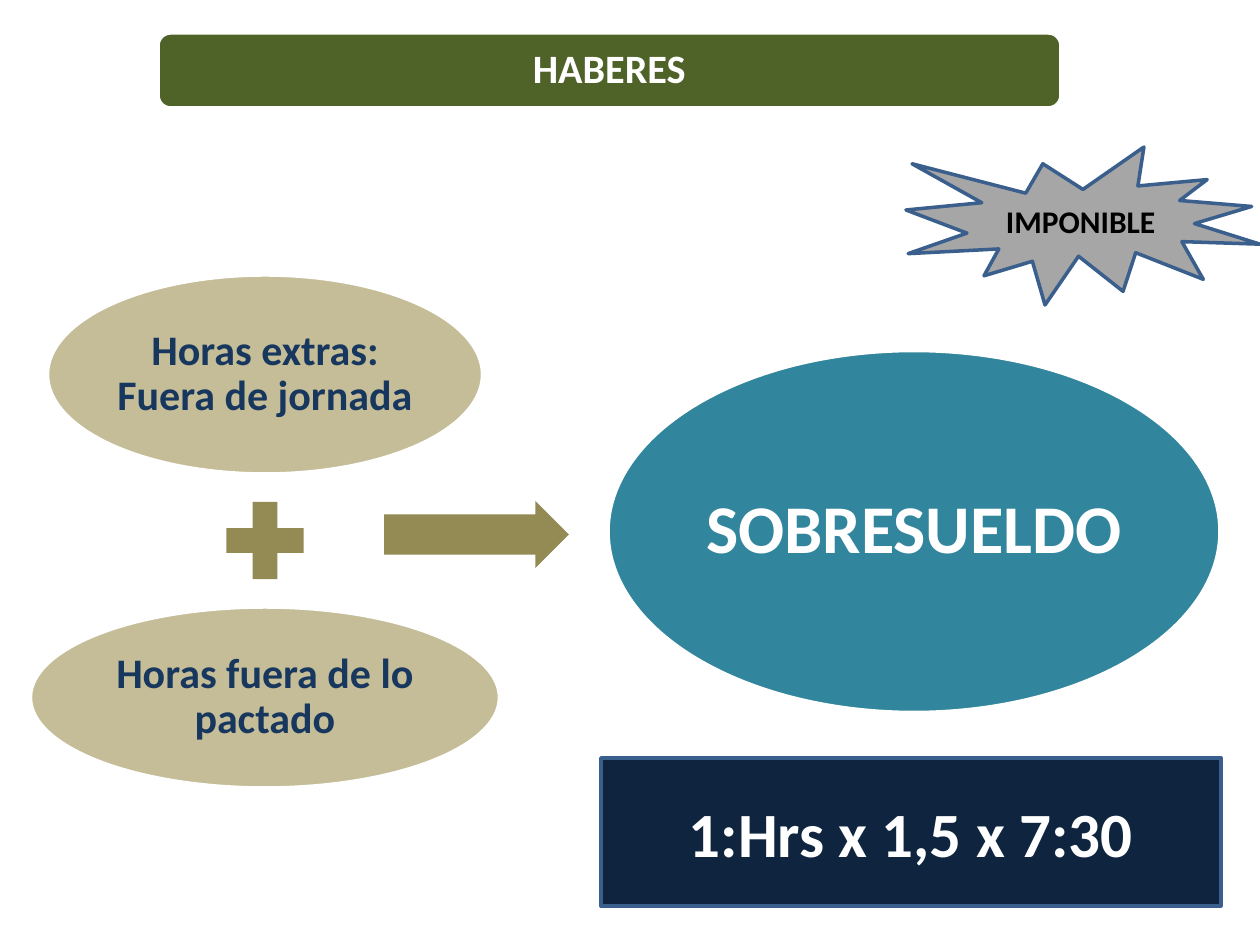
from pptx import Presentation
from pptx.dml.color import RGBColor
from pptx.enum.shapes import MSO_SHAPE
from pptx.enum.text import MSO_ANCHOR, PP_ALIGN
from pptx.util import Emu, Pt

ROUND = MSO_SHAPE.ROUNDED_RECTANGLE
OVAL = MSO_SHAPE.OVAL
PLUS = MSO_SHAPE.MATH_PLUS
ARROW = MSO_SHAPE.RIGHT_ARROW
RECT = MSO_SHAPE.RECTANGLE
BURST = MSO_SHAPE.EXPLOSION1
MIDDLE = MSO_ANCHOR.MIDDLE
CENTER = PP_ALIGN.CENTER

SCALE = 914400 / 126
FONT = "Calibri"
WHITE, BLACK, NAVY = "FFFFFF", "000000", "17375E"
GREEN, TAN, OLIVE, TEAL = "4F6228", "C4BD97", "948A54", "31859C"
DARK, GRAY, BLUE = "0F243E", "A6A6A6", "3A5F8C"


def px(n):
    """Turn px into EMU."""
    return Emu(round(n * SCALE))


def hue(code):
    """Turn a hex string into a colour."""
    return RGBColor.from_string(code)


def draw(slide, kind, box, fill, line=None):
    """Add a flat shape, with an outline if one is given."""
    shape = slide.shapes.add_shape(kind, *map(px, box))
    shape.shadow.inherit = False
    shape.fill.solid()
    shape.fill.fore_color.rgb = hue(fill)
    if line:
        shape.line.color.rgb = hue(line)
        shape.line.width = Pt(2)
    else:
        shape.line.fill.background()
    return shape


def write(shape, text, size, color, pad=None, gap=None):
    """Put one bold centred paragraph in a shape."""
    frame = shape.text_frame
    frame.word_wrap = True
    frame.vertical_anchor = MIDDLE
    if pad is not None:
        frame.margin_left = frame.margin_right = px(pad)
        frame.margin_top = frame.margin_bottom = px(pad)
    para = frame.paragraphs[0]
    para.alignment = CENTER
    if gap:
        para.line_spacing = gap
    run = para.add_run()
    run.text = text
    run.font.name = FONT
    run.font.size = Pt(size)
    run.font.bold = True
    run.font.color.rgb = hue(color)


def header(slide, box):
    """Draw the title bar."""
    bar = draw(slide, ROUND, box, GREEN, WHITE)
    write(bar, "HABERES", 23, WHITE, 12, 0.9)


def total(slide, box):
    """Draw the two kinds of hours, the plus, the arrow and their sum."""
    left, top, width, height = box
    mid, gap = left + 235, 14
    parts = [
        (OVAL, 435, 199, TAN, WHITE, "Horas extras: Fuera de jornada"),
        (PLUS, 105, 105, OLIVE, None, None),
        (OVAL, 469, 181, TAN, WHITE, "Horas fuera de lo pactado"),
    ]
    y = top
    for kind, w, h, fill, line, text in parts:
        shape = draw(slide, kind, (mid - w / 2, y, w, h), fill, line)
        if text:
            write(shape, text, 24, NAVY, 4, 0.9)
        y += h + gap
    arrow = draw(slide, ARROW, (left + 354, top + 226, 185, 67), OLIVE)
    arrow.adjustments[0] = 0.6
    w, h = 612, 362
    place = (left + width - w, top + (height - h) / 2, w, h)
    write(draw(slide, OVAL, place, TEAL, WHITE), "SOBRESUELDO", 39, WHITE, 6, 0.9)


def rate(slide, box):
    """Draw the formula panel."""
    write(draw(slide, RECT, box, DARK, BLUE), "1:Hrs x 1,5 x 7:30", 36, WHITE)


def badge(slide, box):
    """Draw the burst label."""
    write(draw(slide, BURST, box, GRAY, BLUE), "IMPONIBLE", 18, BLACK)


def main():
    """Build and save the slide."""
    deck = Presentation()
    deck.slide_width, deck.slide_height = px(1260), px(945)
    slide = deck.slides.add_slide(deck.slide_layouts[6])
    header(slide, (158, 33, 903, 75))
    total(slide, (30, 275, 1190, 513))
    rate(slide, (601, 758, 620, 148))
    badge(slide, (906, 147, 354, 158))
    deck.save("out.pptx")


if __name__ == "__main__":
    main()
